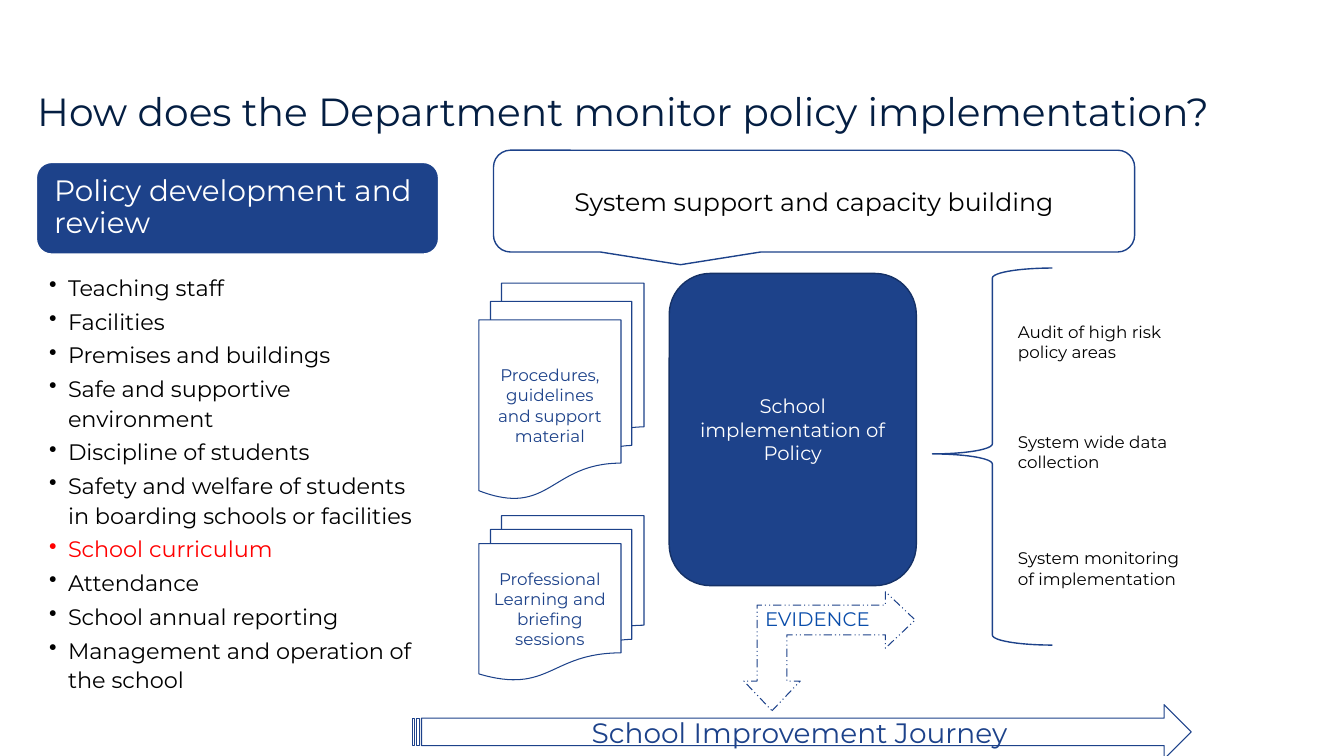
from lxml import etree
from pptx import Presentation
from pptx.dml.color import RGBColor
from pptx.enum.dml import MSO_LINE
from pptx.enum.shapes import MSO_SHAPE
from pptx.enum.text import MSO_ANCHOR, PP_ALIGN
from pptx.oxml.ns import qn
from pptx.util import Pt

DOCS = MSO_SHAPE.FLOWCHART_MULTIDOCUMENT
ROUND = MSO_SHAPE.ROUNDED_RECTANGLE
CALLOUT = MSO_SHAPE.ROUNDED_RECTANGULAR_CALLOUT
STRIPED = MSO_SHAPE.STRIPED_RIGHT_ARROW
TWO_WAY = MSO_SHAPE.LEFT_UP_ARROW
BRACE = MSO_SHAPE.LEFT_BRACE
DASH = MSO_LINE.DASH_DOT_DOT
TOP, MIDDLE = MSO_ANCHOR.TOP, MSO_ANCHOR.MIDDLE
LEFT, CENTER = PP_ALIGN.LEFT, PP_ALIGN.CENTER

FACE = "Montserrat"
BLUE, WHITE, BLACK, RED = "1D428A", "FFFFFF", "000000", "FF0000"

TOPICS = [
    "Teaching staff",
    "Facilities",
    "Premises and buildings",
    "Safe and supportive environment",
    "Discipline of students",
    "Safety and welfare of students in boarding schools or facilities",
    "School curriculum",
    "Attendance",
    "School annual reporting",
    "Management and operation of the school",
]
CHECKS = [
    (119, "Audit of high risk policy areas"),
    (198, "System wide data collection"),
    (281, "System monitoring of implementation"),
]


def color(code):
    return RGBColor.from_string(code)


def apply(item, values):
    for name, value in values.items():
        setattr(item, name, value)


def place(item, box):
    names = ("left", "top", "width", "height")
    apply(item, {name: Pt(size) for name, size in zip(names, box)})


def shift(area, left, top, width, height):
    return area[0] + left, area[1] + top, width, height


def write(item, lines, size, code, align=LEFT, anchor=TOP,
          inset=(7.2, 3.6, 7.2, 3.6), space=1, after=0, bullet=False):
    frame = item.text_frame
    names = ("margin_left", "margin_top", "margin_right", "margin_bottom")
    apply(frame, {name: Pt(gap) for name, gap in zip(names, inset)})
    apply(frame, {"word_wrap": True, "vertical_anchor": anchor})
    for count, line in enumerate(lines):
        para = frame.add_paragraph() if count else frame.paragraphs[0]
        apply(para, {"alignment": align, "line_spacing": space,
                     "space_after": Pt(after)})
        if bullet:
            props = para._p.get_or_add_pPr()
            props.set("marL", str(Pt(13.5)))
            props.set("indent", str(Pt(-13.5)))
            etree.SubElement(props, qn("a:buChar")).set("char", "•")
        run = para.add_run()
        run.text = line
        apply(run.font, {"name": FACE, "size": Pt(size), "bold": False})
        run.font.color.rgb = color(code)


def label(slide, box, lines, size, code, **style):
    item = slide.shapes.add_textbox(*map(Pt, box))
    write(item, lines, size, code, **style)
    return item


def draw(slide, kind, box, fill=None, edge=BLUE, width=1):
    item = slide.shapes.add_shape(kind, *map(Pt, box))
    item.shadow.inherit = False
    if fill:
        item.fill.solid()
        item.fill.fore_color.rgb = color(fill)
    else:
        item.fill.background()
    item.line.color.rgb = color(edge)
    item.line.width = Pt(width)
    return item


def add_title(slide, box):
    title = slide.shapes.title
    place(title, box)
    write(title, ["How does the Department monitor policy implementation?"],
          28, "041E42", anchor=MIDDLE, inset=(0, 0, 0, 0), space=0.9)


def add_policy(slide, area):
    wide = area[2]
    head = draw(slide, ROUND, shift(area, 0, 0, wide, 65.5), BLUE, WHITE)
    write(head, ["Policy development and review"], 21, WHITE,
          anchor=MIDDLE, inset=(9.5, 9.5, 9.5, 9.5), space=0.9)
    body = label(slide, shift(area, 0, 75.5, wide, 322), TOPICS, 16, BLACK,
                 inset=(9.1, 2.3, 11.5, 2.3), space=1.1, after=3, bullet=True)
    topic = body.text_frame.paragraphs[TOPICS.index("School curriculum")]
    topic.runs[0].font.color.rgb = color(RED)


def add_system(slide, area):
    blocks = [
        (DOCS, (47, 95, 118, 154), None, BLUE, 0.75, 12, BLUE,
         "Procedures, guidelines and support material"),
        (DOCS, (47, 261, 118, 117.5), None, BLUE, 0.75, 12, BLUE,
         "Professional Learning and briefing sessions"),
        (ROUND, (183, 88, 176.5, 223), BLUE, "153166", 1, 14, WHITE,
         "School implementation of Policy"),
        (CALLOUT, (57.5, 0, 458, 72.7), WHITE, BLUE, 1, 18, BLACK,
         "System support and capacity building"),
        (STRIPED, (0, 396, 556, 39), None, BLUE, 0.75, 20, BLUE,
         "School Improvement Journey"),
    ]
    for kind, box, fill, edge, width, size, code, text in blocks:
        item = draw(slide, kind, shift(area, *box), fill, edge, width)
        write(item, [text], size, code, align=CENTER, anchor=MIDDLE)


def add_proof(slide, area):
    arrow = draw(slide, TWO_WAY, shift(area, 3.5, 0, 85, 122.4), width=0.75)
    arrow.line.dash_style = DASH
    arrow.rotation = 270
    arrow._element.spPr.xfrm.set("flipV", "1")
    for spot, value in enumerate((0.25, 0.237, 0.25)):
        arrow.adjustments[spot] = value
    label(slide, shift(area, 0, 29.5, 90.7, 13.7), ["EVIDENCE"], 14,
          "0A4DAA", inset=(0, 0, 0, 0))


def add_checks(slide, area):
    brace = draw(slide, BRACE, shift(area, 0, 84.5, 85.7, 269.3))
    brace.adjustments[1] = 0.493
    for top, text in CHECKS:
        label(slide, shift(area, 54, top, 133, 36), [text], 12, BLACK)


def main():
    deck = Presentation()
    apply(deck, {"slide_width": Pt(960), "slide_height": Pt(540)})
    slide = deck.slides.add_slide(deck.slide_layouts[5])
    add_title(slide, (26.6, 61.2, 903.6, 39.6))
    add_policy(slide, (26, 116, 287.3, 397.5))
    add_system(slide, (295, 107.3, 556, 435))
    add_proof(slide, (546.5, 404, 90.7, 122.4))
    add_checks(slide, (666, 107, 187, 354))
    deck.save("out.pptx")


if __name__ == "__main__":
    main()
